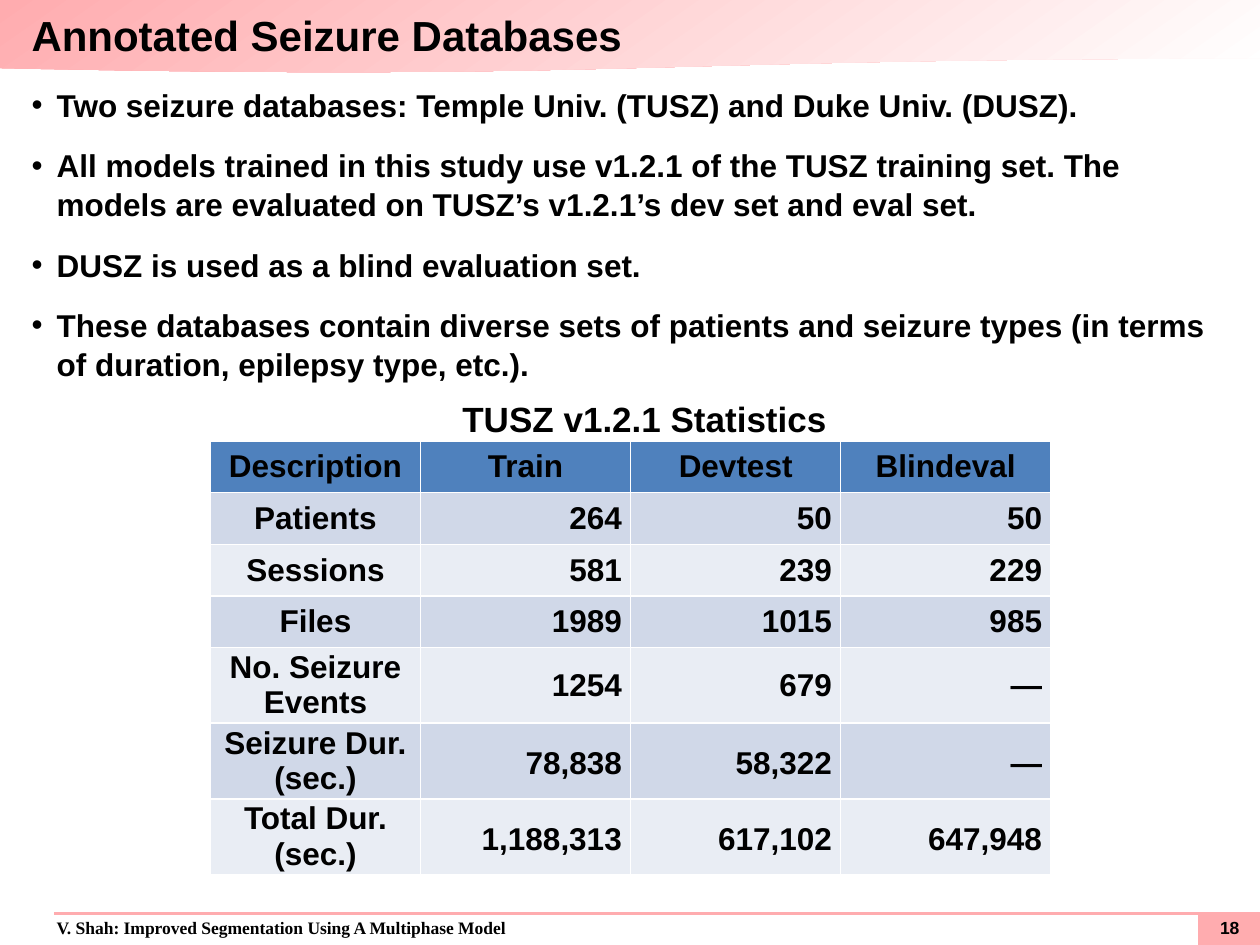
from typing import NamedTuple

from pptx import Presentation
from pptx.dml.color import RGBColor
from pptx.enum.shapes import MSO_SHAPE as Kind
from pptx.enum.text import MSO_ANCHOR as Anchor, MSO_AUTO_SIZE as Fit, PP_ALIGN as Align
from pptx.oxml.ns import qn
from pptx.util import Inches, Pt

BLACK = RGBColor(0x00, 0x00, 0x00)
WHITE = RGBColor(0xFF, 0xFF, 0xFF)
PINK = RGBColor(0xFF, 0xAC, 0xAF)
BLUE = RGBColor(0x4F, 0x81, 0xBD)
BANDS = (RGBColor(0xE9, 0xED, 0xF4), RGBColor(0xD0, 0xD8, 0xE8))


class Box(NamedTuple):
    left: float
    top: float
    width: float
    height: float


class Label(NamedTuple):
    text: str
    box: Box
    size: int
    font: str = "Arial"
    align: Align = Align.LEFT


class Row(NamedTuple):
    cells: tuple[str, str, str, str]
    height: float = 0.41
    spacing: float = 1.0


TITLE = "Annotated Seizure Databases"
POINTS = (
    "Two seizure databases: Temple Univ. (TUSZ) and Duke Univ. (DUSZ).",
    "All models trained in this study use v1.2.1 of the TUSZ training set. "
    "The models are evaluated on TUSZ’s v1.2.1’s dev set and eval set.",
    "DUSZ is used as a blind evaluation set.",
    "These databases contain diverse sets of patients and seizure types "
    "(in terms of duration, epilepsy type, etc.).",
)
LABELS = (
    Label("V. Shah: Improved Segmentation Using A Multiphase Model",
          Box(0.45, 7.28, 8, 0.17), 10, "Times New Roman"),
    Label("18", Box(9.56, 7.28, 0.4, 0.17), 10, align=Align.CENTER),
    Label("TUSZ v1.2.1 Statistics", Box(3.67, 3.08, 3, 0.48), 20),
)
ROWS = (
    Row(("Description", "Train", "Devtest", "Blindeval")),
    Row(("Patients", "264", "50", "50")),
    Row(("Sessions", "581", "239", "229")),
    Row(("Files", "1989", "1015", "985")),
    Row(("No. Seizure Events", "1254", "679", "—"), 0.6),
    Row(("Seizure Dur. (sec.)", "78,838", "58,322", "—"), 0.6, 1.15),
    Row(("Total Dur. (sec.)", "1,188,313", "617,102", "647,948"), 0.6, 1.15),
)


def place(shape, box: Box) -> None:
    shape.left, shape.top, shape.width, shape.height = map(Inches, box)


def style(para, size: int, font: str = "Arial", align: Align = Align.LEFT) -> None:
    para.alignment = align
    para.font.size, para.font.name = Pt(size), font
    para.font.bold, para.font.color.rgb = True, BLACK


def set_frame(frame, anchor: Anchor) -> None:
    """Clear the insets and fix the size of a text frame."""
    frame.margin_left = frame.margin_right = 0
    frame.margin_top = frame.margin_bottom = 0
    frame.word_wrap, frame.auto_size = True, Fit.NONE
    frame.vertical_anchor = anchor


def add_block(slide, kind: Kind, box: Box):
    shape = slide.shapes.add_shape(kind, *map(Inches, box))
    shape.shadow.inherit = False
    shape.line.fill.background()
    return shape


def add_frame(slide) -> None:
    """Draw the header band, footer rule and page-number block."""
    band = add_block(slide, Kind.FLOWCHART_DOCUMENT, Box(0, 0, 10, 0.58))
    band.fill.gradient()
    band.fill.gradient_angle = 305
    for stop, color in zip(band.fill.gradient_stops, (PINK, WHITE)):
        stop.color.rgb = color
    block = add_block(slide, Kind.RECTANGLE, Box(9.51, 7.24, 0.49, 0.26))
    block.fill.solid()
    block.fill.fore_color.rgb = PINK
    rule = slide.shapes.add_connector(1, *map(Inches, (0.43, 7.25, 10, 7.25)))
    rule.line.color.rgb, rule.line.width = PINK, Pt(1.5)
    props = rule._element.spPr
    props.append(props.makeelement(qn("a:effectLst"), {}))


def fill_title(slide) -> None:
    title = slide.shapes.title
    place(title, Box(0.25, 0, 9.5, 0.55))
    title.text_frame.text = TITLE
    set_frame(title.text_frame, Anchor.MIDDLE)
    style(title.text_frame.paragraphs[0], 24)


def fill_body(slide) -> None:
    body = slide.placeholders[1]
    place(body, Box(0.25, 0.67, 9.5, 2.25))
    body.text_frame.text = "\n".join(POINTS)
    set_frame(body.text_frame, Anchor.TOP)
    for para in body.text_frame.paragraphs:
        props = para._p.get_or_add_pPr()
        props.set("marL", str(Inches(0.2)))
        props.set("indent", str(Inches(-0.2)))
        para.space_before, para.space_after = Pt(0), Pt(12)
        para.line_spacing = 1.04
        style(para, 18)


def add_label(slide, label: Label) -> None:
    frame = slide.shapes.add_textbox(*map(Inches, label.box)).text_frame
    frame.text = label.text
    set_frame(frame, Anchor.MIDDLE)
    style(frame.paragraphs[0], label.size, label.font, label.align)


def add_stats(slide) -> None:
    box = Box(1.67, 3.5, 6.67, sum(row.height for row in ROWS))
    table = slide.shapes.add_table(len(ROWS), 4, *map(Inches, box)).table
    for i, row in enumerate(ROWS):
        table.rows[i].height = Inches(row.height)
        for j, text in enumerate(row.cells):
            cell = table.cell(i, j)
            cell.text = text
            cell.margin_left = cell.margin_right = Inches(0.07)
            cell.margin_top = cell.margin_bottom = 0
            cell.vertical_anchor = Anchor.MIDDLE
            cell.fill.solid()
            cell.fill.fore_color.rgb = BANDS[i % 2] if i else BLUE
            para = cell.text_frame.paragraphs[0]
            number = i > 0 and j > 0
            if number:
                para.line_spacing = row.spacing
            style(para, 18, align=Align.RIGHT if number else Align.CENTER)


def main() -> None:
    deck = Presentation()
    deck.slide_width, deck.slide_height = Inches(10), Inches(7.5)
    slide = deck.slides.add_slide(deck.slide_layouts[1])
    holders = list(slide.placeholders)
    add_frame(slide)
    for holder in holders:  # bring the text in front of the band
        slide.shapes._spTree.append(holder._element)
    fill_title(slide)
    fill_body(slide)
    add_stats(slide)
    for label in LABELS:
        add_label(slide, label)
    deck.save("out.pptx")


if __name__ == "__main__":
    main()
